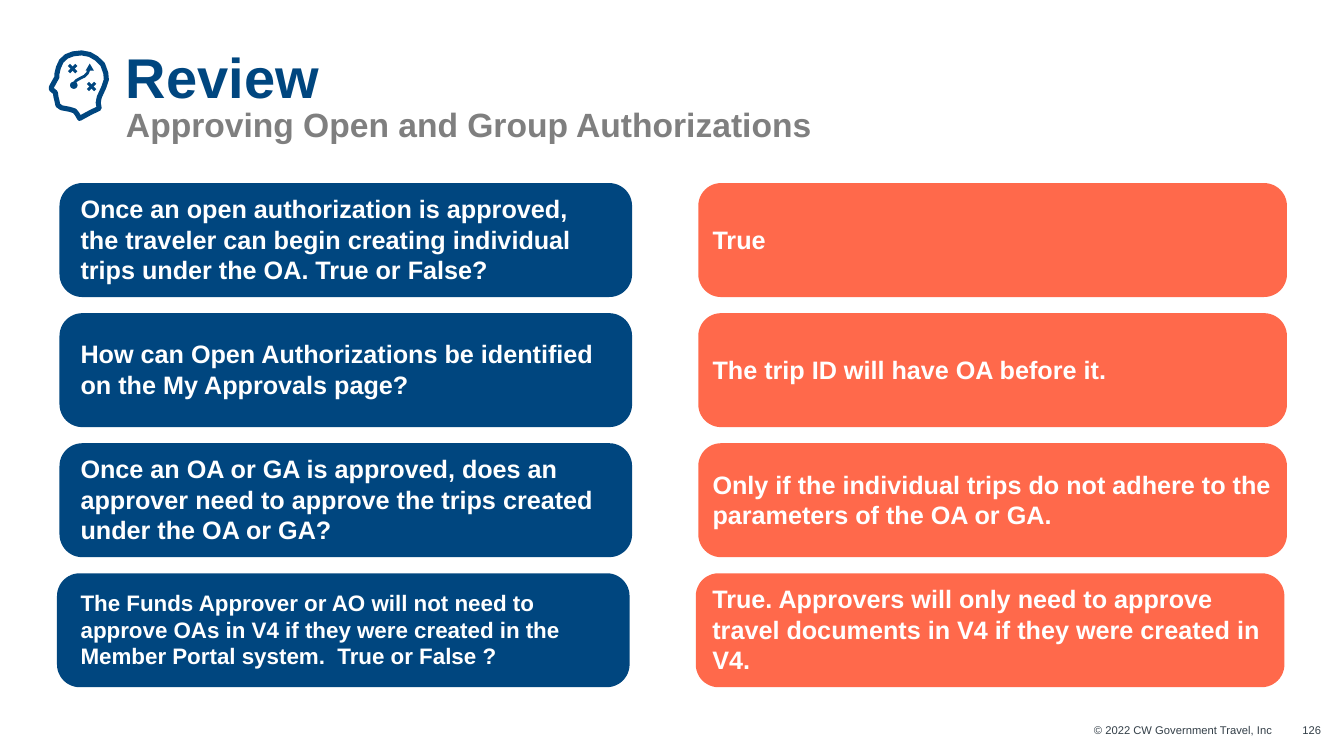
from pptx import Presentation
from pptx.dml.color import RGBColor
from pptx.enum.shapes import MSO_SHAPE
from pptx.enum.text import MSO_ANCHOR, PP_ALIGN
from pptx.util import Pt

ROUNDED = MSO_SHAPE.ROUNDED_RECTANGLE
TRIANGLE = MSO_SHAPE.ISOSCELES_TRIANGLE
OVAL = MSO_SHAPE.OVAL
MIDDLE = MSO_ANCHOR.MIDDLE
LEFT = PP_ALIGN.LEFT
RIGHT = PP_ALIGN.RIGHT

FONT = "Arial"
NAVY = "00467F"
CORAL = "FF694B"
GRAY = "7F7F7F"
SLATE = "333F48"
WHITE = "FFFFFF"

CARD_TOP, CARD_PITCH, CARD_HEIGHT = 130.8, 92.9, 81.4
CARD_ROUNDING = 0.2
QUESTION_LEFT, QUESTION_WIDTH = 42.5, 409
ANSWER_LEFT, ANSWER_WIDTH = 498.8, 420.5
LAST_ROW_SHIFT = 1.8

REVIEW = [
    ("Once an open authorization is approved, the traveler can begin creating "
     "individual trips under the OA. True or False?", 18, "True"),
    ("How can Open Authorizations be identified on the My Approvals page?", 18,
     "The trip ID will have OA before it."),
    ("Once an OA or GA is approved, does an approver need to approve the trips "
     "created\nunder the OA or GA?", 18,
     "Only if the individual trips do not adhere to the parameters of the OA or GA."),
    ("The Funds Approver or AO will not need to approve OAs in V4 if they were "
     "created in the Member Portal system.  True or False ?", 16,
     "True. Approvers will only need to approve travel documents in V4 if they "
     "were created in V4."),
]

HEAD = [
    (75.6, 52.2), (76, 56.9), (74.2, 62.3), (72.4, 66.2), (70.9, 69.5),
    (70.2, 73.4), (70.9, 77.4), (64.8, 80.3), (56.9, 84.6), (55.1, 81.4),
    (53.3, 79.2), (49.7, 78.1), (43.9, 77), (41.4, 75.2), (40.7, 72),
    (40, 69.1), (39.6, 66.2), (36.7, 63.7), (36.7, 62.3), (38.9, 58.3),
    (40.7, 55.1), (40.7, 52.6), (41.8, 48.2), (43.9, 43.6), (47.5, 40.3),
    (52.2, 38.5), (58.3, 37.8), (64.1, 38.9), (69.1, 41.8), (73.4, 46.1),
]
ROUTE = [(53.3, 59), (54.5, 57.5), (57.5, 55.8), (60.5, 54.4), (62.6, 52.2), (63.8, 49)]
CROSS_CENTERS = [(51.9, 49), (65.4, 61.8)]
CROSS_REACH = 2.6


def color(hex_string):
    """Turn a hex string into a colour."""
    return RGBColor.from_string(hex_string)


def style_font(font, size, hex_string, bold=False):
    """Set face, size, colour and weight of a font."""
    font.name = FONT
    font.size = Pt(size)
    font.bold = bold
    font.color.rgb = color(hex_string)


def set_margins(frame, left=0, right=0, bottom=0):
    """Wrap the text and set its margins."""
    frame.word_wrap = True
    frame.margin_left, frame.margin_right = Pt(left), Pt(right)
    frame.margin_top, frame.margin_bottom = 0, Pt(bottom)


def add_filled(slide, preset, left, top, width, height, fill):
    """Add a preset shape with a plain fill and no line."""
    shape = slide.shapes.add_shape(preset, Pt(left), Pt(top), Pt(width), Pt(height))
    shape.shadow.inherit = False
    shape.fill.solid()
    shape.fill.fore_color.rgb = color(fill)
    shape.line.fill.background()
    return shape


def add_card(slide, left, top, width, fill, text, size, indent, right_margin):
    """Add a rounded card holding bold white text."""
    card = add_filled(slide, ROUNDED, left, top, width, CARD_HEIGHT, fill)
    card.adjustments[0] = CARD_ROUNDING
    frame = card.text_frame
    set_margins(frame, indent, right_margin, bottom=1.6)
    frame.vertical_anchor = MIDDLE
    frame.text = text
    for paragraph in frame.paragraphs:
        paragraph.alignment = LEFT
        style_font(paragraph.font, size, WHITE, bold=True)


def add_stroke(slide, points, weight, close=False):
    """Draw an unfilled navy line through the points."""
    corners = [(Pt(x), Pt(y)) for x, y in points]
    builder = slide.shapes.build_freeform(*corners[0])
    builder.add_line_segments(corners[1:], close=close)
    stroke = builder.convert_to_shape()
    stroke.shadow.inherit = False
    stroke.fill.background()
    stroke.line.color.rgb = color(NAVY)
    stroke.line.width = Pt(weight)


def add_strategy_icon(slide):
    """Draw a head in profile with a planned route inside."""
    add_stroke(slide, HEAD, 3.6, close=True)
    add_stroke(slide, ROUTE, 2)
    add_filled(slide, OVAL, 50, 58.3, 5.4, 5.2, NAVY)
    add_filled(slide, TRIANGLE, 61.2, 45.4, 5.8, 5, NAVY)
    for x, y in CROSS_CENTERS:
        for rise in (-CROSS_REACH, CROSS_REACH):
            add_stroke(slide, [(x - CROSS_REACH, y - rise), (x + CROSS_REACH, y + rise)], 2.2)


def add_text_box(slide, left, top, width, height):
    """Add a wrapping text box without margins and return its first paragraph."""
    box = slide.shapes.add_textbox(Pt(left), Pt(top), Pt(width), Pt(height))
    set_margins(box.text_frame)
    return box.text_frame.paragraphs[0]


def add_heading(slide, title, subtitle):
    """Add the title with its subtitle on the next line."""
    paragraph = add_text_box(slide, 90, 37.6, 830, 66.2)
    paragraph.line_spacing = 0.85
    run = paragraph.add_run()
    run.text = title
    style_font(run.font, 40, NAVY, bold=True)
    paragraph.add_line_break()
    run = paragraph.add_run()
    run.text = subtitle
    style_font(run.font, 24, GRAY, bold=True)


def add_footer(slide, left, width, text):
    """Add small right-aligned text at the foot of the slide."""
    paragraph = add_text_box(slide, left, 516.6, width, 10)
    paragraph.text = text
    paragraph.alignment = RIGHT
    style_font(paragraph.font, 8, SLATE)


def main():
    """Build the review slide and save it."""
    presentation = Presentation()
    presentation.slide_width, presentation.slide_height = Pt(960), Pt(540)
    slide = presentation.slides.add_slide(presentation.slide_layouts[6])
    add_strategy_icon(slide)
    add_heading(slide, "Review", "Approving Open and Group Authorizations")
    for row, (question, size, answer) in enumerate(REVIEW):
        top = CARD_TOP + row * CARD_PITCH
        shift = LAST_ROW_SHIFT if row == len(REVIEW) - 1 else 0
        add_card(slide, QUESTION_LEFT - shift, top, QUESTION_WIDTH, NAVY,
                 question, size, 10.3 + shift, 12)
        add_card(slide, ANSWER_LEFT - shift, top, ANSWER_WIDTH, CORAL,
                 answer, 18, 5.4 + shift, 0)
    add_footer(slide, 603.6, 305.2, "© 2022 CW Government Travel, Inc")
    add_footer(slide, 927, 16.6, "126")
    presentation.save("out.pptx")


if __name__ == "__main__":
    main()
